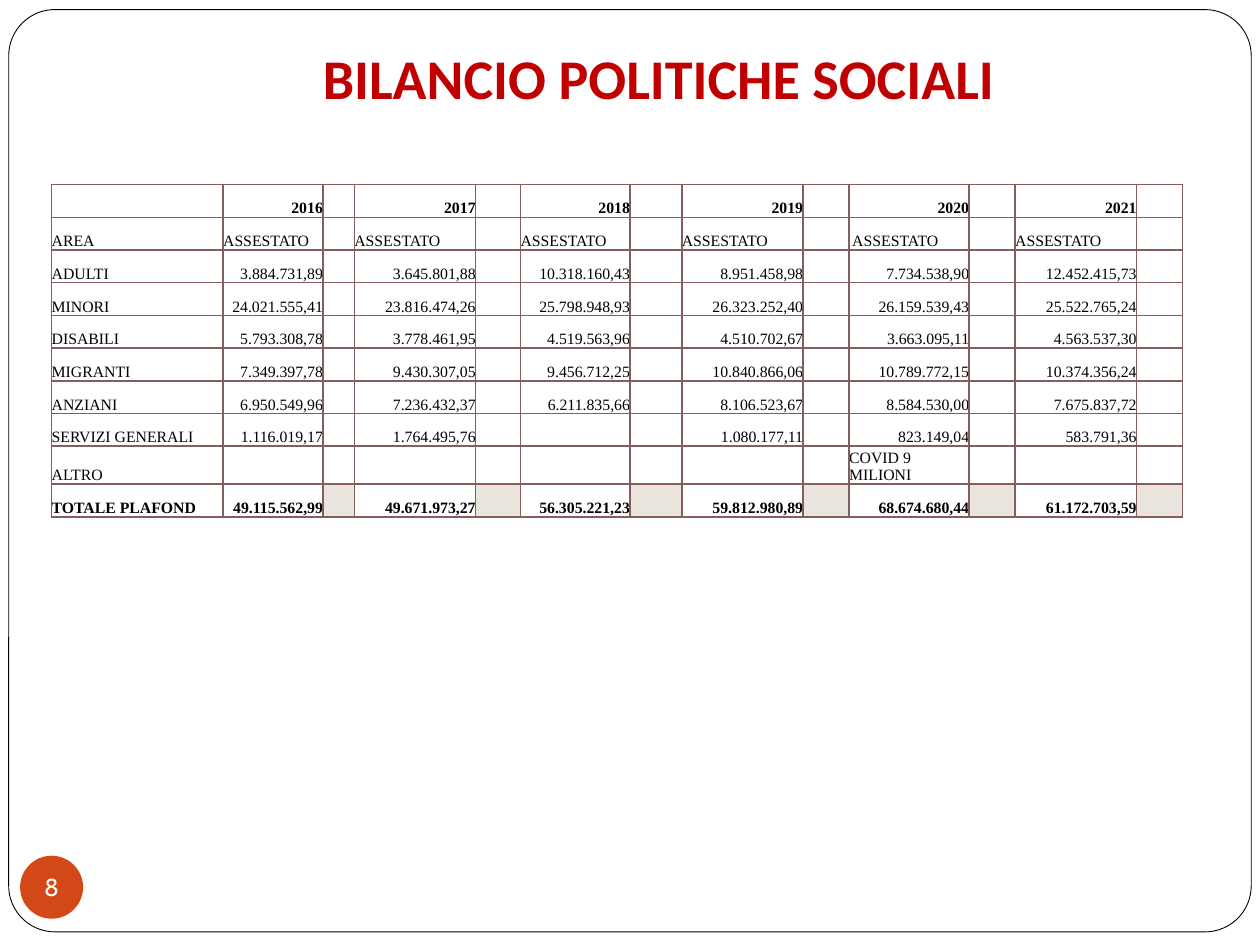
from lxml import etree
from pptx import Presentation
from pptx.dml.color import RGBColor
from pptx.enum import shapes, text
from pptx.oxml import ns
from pptx.util import Pt

HUES = {"page": "FFFFFF", "ink": "000000", "title": "C00000",
        "badge": "D34817", "grid": "855D5D", "total": "E9E5DC"}
SERIF = "Times New Roman"
LEFT, RIGHT, MID = text.PP_ALIGN.LEFT, text.PP_ALIGN.RIGHT, text.PP_ALIGN.CENTER

YEARS = ["2016", "2017", "2018", "2019", "2020", "2021"]
ROWS = [
    ["", *YEARS],
    ["AREA", *[" ASSESTATO" if year == "2020" else "ASSESTATO" for year in YEARS]],
    ["ADULTI", "3.884.731,89", "3.645.801,88", "10.318.160,43",
     "8.951.458,98", "7.734.538,90", "12.452.415,73"],
    ["MINORI", "24.021.555,41", "23.816.474,26", "25.798.948,93",
     "26.323.252,40", "26.159.539,43", "25.522.765,24"],
    ["DISABILI", "5.793.308,78", "3.778.461,95", "4.519.563,96",
     "4.510.702,67", "3.663.095,11", "4.563.537,30"],
    ["MIGRANTI", "7.349.397,78", "9.430.307,05", "9.456.712,25",
     "10.840.866,06", "10.789.772,15", "10.374.356,24"],
    ["ANZIANI", "6.950.549,96", "7.236.432,37", "6.211.835,66",
     "8.106.523,67", "8.584.530,00", "7.675.837,72"],
    ["SERVIZI GENERALI", "1.116.019,17", "1.764.495,76", "",
     "1.080.177,11", "823.149,04", "583.791,36"],
    ["ALTRO", "", "", "", "", "COVID 9 MILIONI", ""],
    ["TOTALE PLAFOND", "49.115.562,99", "49.671.973,27", "56.305.221,23",
     "59.812.980,89", "68.674.680,44", "61.172.703,59"],
]
# Area column, then a value column and a narrow gap column for each year
WIDTHS = [98, 57, 18, 69.3, 25.7, 62.5, 29.7, 69.3, 26.4, 68.5, 26.4, 69.3, 26.4]


def hue(name):
    return RGBColor.from_string(HUES[name])


def style(para, face, size, color, align, bold=False):
    para.alignment = align
    font = para.font
    font.name, font.size, font.bold = face, Pt(size), bold
    font.color.rgb = hue(color)


def shape(slide, kind, box, fill):
    item = slide.shapes.add_shape(kind, *map(Pt, box))
    item.shadow.inherit = False
    item.fill.solid()
    item.fill.fore_color.rgb = hue(fill)
    return item


def frame(slide, box):
    """Draw the rounded outline round the page."""
    item = shape(slide, shapes.MSO_SHAPE.ROUNDED_RECTANGLE, box, "page")
    item.adjustments[0] = 0.05
    item.line.color.rgb = hue("ink")
    item.line.width = Pt(0.5)


def title(slide, box, words):
    body = slide.shapes.add_textbox(*map(Pt, box)).text_frame
    body.word_wrap = True
    body.vertical_anchor = text.MSO_ANCHOR.BOTTOM
    body.margin_bottom = Pt(7.2)
    body.text = words
    style(body.paragraphs[0], "Calibri", 32, "title", MID, True)


def badge(slide, box, number):
    item = shape(slide, shapes.MSO_SHAPE.OVAL, box, "badge")
    item.line.fill.background()
    body = item.text_frame
    body.margin_left = body.margin_right = body.margin_top = body.margin_bottom = 0
    body.word_wrap = False
    body.vertical_anchor = text.MSO_ANCHOR.MIDDLE
    body.text = number
    style(body.paragraphs[0], "Cabin", 14, "page", MID)


def border(cell):
    props = cell._tc.get_or_add_tcPr()
    for side in ("lnL", "lnR", "lnT", "lnB"):
        line = etree.SubElement(props, ns.qn("a:" + side), w=str(Pt(1)))
        fill = etree.SubElement(line, ns.qn("a:solidFill"))
        etree.SubElement(fill, ns.qn("a:srgbClr"), val=HUES["grid"])


def fill_cell(cell, words, align, bold, shade):
    border(cell)
    cell.margin_left = cell.margin_right = cell.margin_top = cell.margin_bottom = 0
    cell.vertical_anchor = text.MSO_ANCHOR.BOTTOM
    if shade:
        cell.fill.solid()
        cell.fill.fore_color.rgb = hue("total")
    else:
        cell.fill.background()
    cell.text = words
    style(cell.text_frame.paragraphs[0], SERIF, 9, "ink", align, bold)


def budget(slide, box):
    """Place the table of yearly amounts by area."""
    height = box[3] / len(ROWS)
    table = slide.shapes.add_table(len(ROWS), len(WIDTHS), *map(Pt, box)).table
    table.first_row = table.horz_banding = False
    for col, width in zip(table.columns, WIDTHS):
        col.width = Pt(width)
    for r, (area, *values) in enumerate(ROWS):
        table.rows[r].height = Pt(height)
        total = r == len(ROWS) - 1
        cells = [area]
        for value in values:
            cells += [value, ""]
        for c, words in enumerate(cells):
            align = RIGHT if words[-1:].isdigit() else LEFT
            gap = c > 0 and c % 2 == 0
            fill_cell(table.cell(r, c), words, align, r == 0 or total, total and gap)


def main():
    deck = Presentation()
    deck.slide_width, deck.slide_height = Pt(720), Pt(540)
    slide = deck.slides.add_slide(deck.slide_layouts[6])
    frame(slide, (5, 5.5, 710, 527))
    title(slide, (70.5, -19.5, 612, 90), "BILANCIO POLITICHE SOCIALI")
    badge(slide, (11.5, 489, 36, 36), "8")
    budget(slide, (29.5, 105.5, sum(WIDTHS), 187))
    deck.save("out.pptx")


if __name__ == "__main__":
    main()
